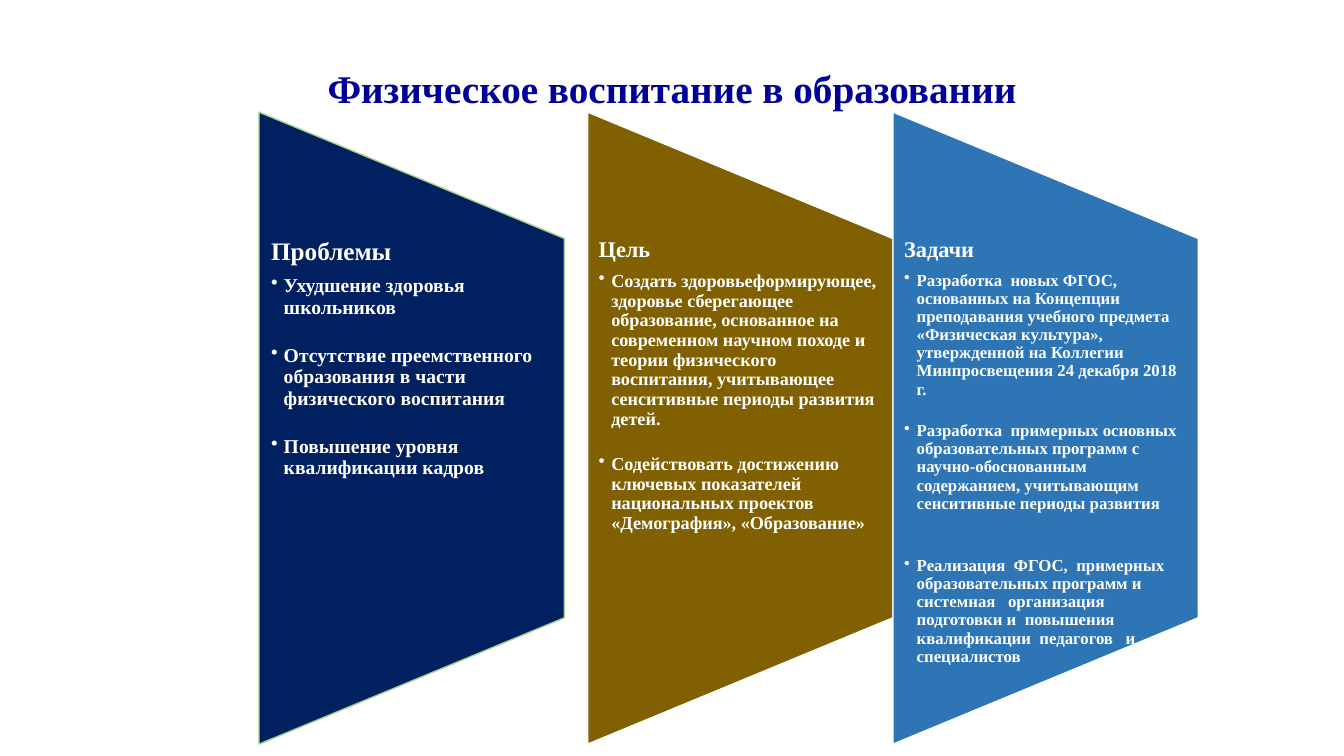
from dataclasses import dataclass

from lxml.etree import SubElement
from pptx import Presentation
from pptx.dml.color import RGBColor
from pptx.enum.shapes import MSO_SHAPE
from pptx.enum.text import MSO_ANCHOR, MSO_AUTO_SIZE, PP_ALIGN
from pptx.oxml.ns import qn
from pptx.util import Pt

# Content: each bullet is followed by the number of blank lines left after it
TITLE = "Физическое воспитание в образовании"
COLUMNS = [
    {
        "heading": "Проблемы", "left": 185.04, "inset": 8.64,
        "heading_size": 18, "bullet_size": 14, "fill": "002060", "line": "A9D18E",
        "bullets": [
            ("Ухудшение здоровья школьников", 1),
            ("Отсутствие преемственного образования в части физического воспитания", 1),
            ("Повышение уровня квалификации кадров", 0),
        ],
    },
    {
        "heading": "Цель", "left": 419.76, "inset": 7.92,
        "heading_size": 16, "bullet_size": 13, "fill": "806000", "line": "FFFFFF",
        "bullets": [
            ("Создать здоровьеформирующее, здоровье сберегающее образование, "
             "основанное на современном научном походе и теории физического воспитания, "
             "учитывающее сенситивные периоды развития детей.", 1),
            ("Содействовать достижению ключевых показателей национальных проектов "
             "«Демография», «Образование»", 0),
        ],
    },
    {
        "heading": "Задачи", "left": 637.92, "inset": 7.92,
        "heading_size": 16, "bullet_size": 12, "fill": "2E75B6", "line": "FFFFFF",
        "bullets": [
            ("Разработка  новых ФГОС, основанных на Концепции преподавания учебного "
             "предмета «Физическая культура»,  утвержденной на Коллегии "
             "Минпросвещения 24 декабря 2018 г.", 1),
            ("Разработка  примерных основных образовательных программ с "
             "научно-обоснованным содержанием, учитывающим сенситивные периоды "
             "развития", 2),
            ("Реализация  ФГОС,  примерных образовательных программ и "
             "системная   организация  подготовки и  повышения "
             "квалификации  педагогов   и  специалистов", 0),
        ],
    },
]


@dataclass(frozen=True)
class Theme:
    font: str = "Times New Roman"
    title_color: str = "000099"
    text_color: str = "FFFFFF"
    title_size: float = 28
    line_spacing: float = 0.9
    heading_gap: float = 0.4
    bullet_gap: float = 0.17
    blank_line: float = 1.23
    bullet_indent: float = 9


THEME = Theme()
COLUMN_WIDTH, PANEL_HEIGHT, TEXT_HEIGHT = 218.16, 451.44, 270.72
CENTER_Y = 305.8


def write_paragraph(paragraph, text, size, color, space_after=0):
    paragraph.text = text
    paragraph.line_spacing = THEME.line_spacing
    paragraph.space_before = Pt(0)
    paragraph.space_after = Pt(space_after)
    for run in paragraph.runs:
        run.font.name = THEME.font
        run.font.size = Pt(size)
        run.font.bold = True
        run.font.color.rgb = RGBColor.from_string(color)


def add_bullet(paragraph):
    properties = paragraph._p.get_or_add_pPr()
    properties.set("marL", str(Pt(THEME.bullet_indent)))
    properties.set("indent", str(-Pt(THEME.bullet_indent)))
    SubElement(properties, qn("a:buChar")).set("char", "•")


def add_panel(slide, column):
    # The preset lies on its side, so its width becomes the visible height
    center_x = column["left"] + COLUMN_WIDTH / 2
    panel = slide.shapes.add_shape(
        MSO_SHAPE.FLOWCHART_MANUAL_OPERATION,
        Pt(center_x - PANEL_HEIGHT / 2), Pt(CENTER_Y - COLUMN_WIDTH / 2),
        Pt(PANEL_HEIGHT), Pt(COLUMN_WIDTH))
    panel.rotation = 270
    panel.shadow.inherit = False
    panel.fill.solid()
    panel.fill.fore_color.rgb = RGBColor.from_string(column["fill"])
    panel.line.color.rgb = RGBColor.from_string(column["line"])
    panel.line.width = Pt(1)


def add_column_text(slide, column):
    text_box = slide.shapes.add_textbox(
        Pt(column["left"]), Pt(CENTER_Y - TEXT_HEIGHT / 2),
        Pt(COLUMN_WIDTH), Pt(TEXT_HEIGHT))
    frame = text_box.text_frame
    frame.word_wrap = True
    frame.margin_left = frame.margin_right = Pt(column["inset"])
    frame.margin_top = frame.margin_bottom = Pt(0)

    heading_size, size = column["heading_size"], column["bullet_size"]
    write_paragraph(frame.paragraphs[0], column["heading"], heading_size,
                    THEME.text_color, heading_size * THEME.heading_gap)
    for text, blank_lines in column["bullets"]:
        paragraph = frame.add_paragraph()
        gap = size * (THEME.bullet_gap + THEME.blank_line * blank_lines)
        write_paragraph(paragraph, text, size, THEME.text_color, gap)
        add_bullet(paragraph)


def main():
    presentation = Presentation()
    presentation.slide_width, presentation.slide_height = Pt(960), Pt(540)
    slide = presentation.slides.add_slide(presentation.slide_layouts[5])

    # Title
    title = slide.shapes.title
    title.left, title.top, title.width, title.height = Pt(66), Pt(28.8), Pt(828), Pt(72)
    title.text_frame.vertical_anchor = MSO_ANCHOR.MIDDLE
    title.text_frame.auto_size = MSO_AUTO_SIZE.NONE
    paragraph = title.text_frame.paragraphs[0]
    write_paragraph(paragraph, TITLE, THEME.title_size, THEME.title_color)
    paragraph.alignment = PP_ALIGN.CENTER

    # Three panels with their text
    for column in COLUMNS:
        add_panel(slide, column)
        add_column_text(slide, column)

    presentation.save("out.pptx")


if __name__ == "__main__":
    main()
